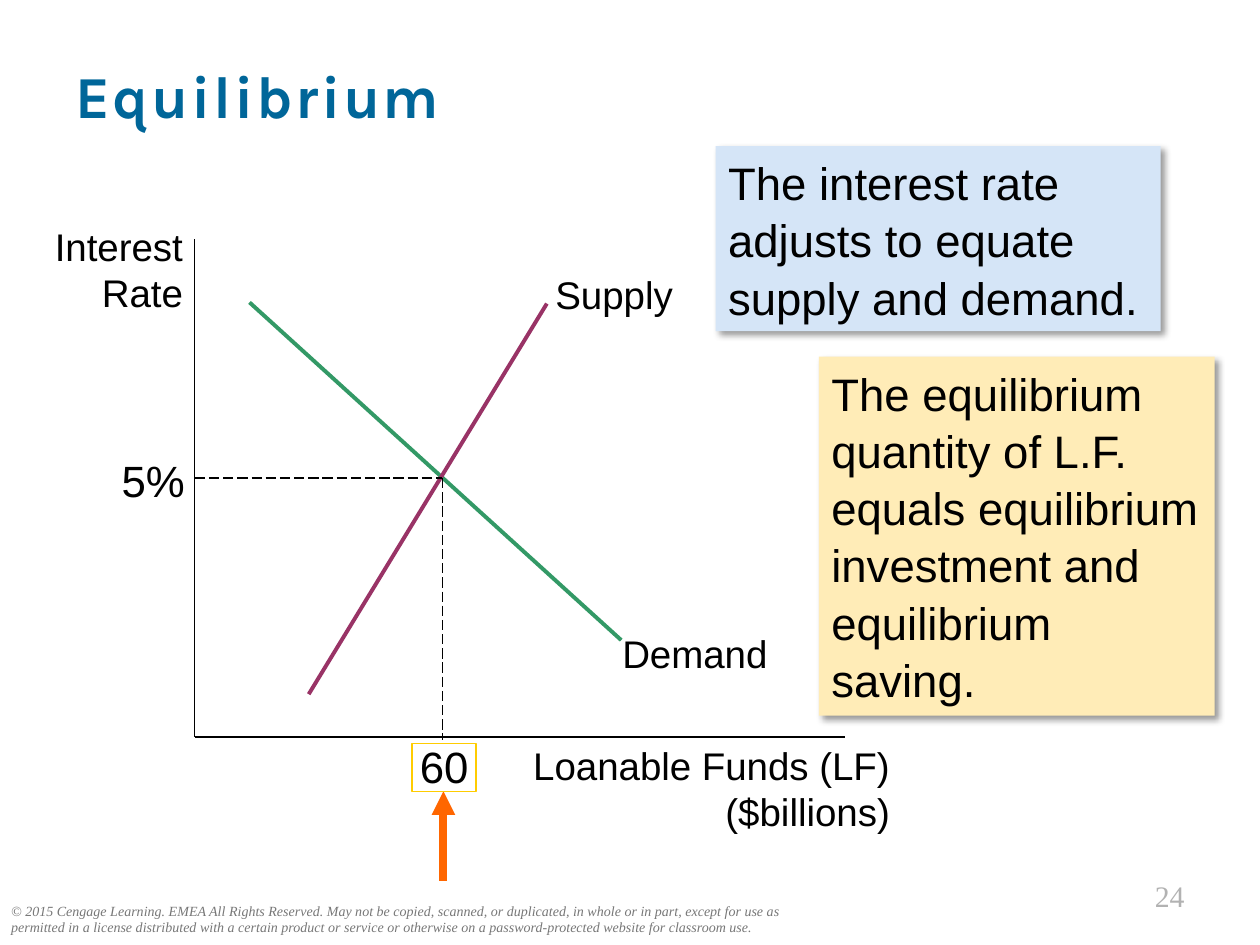
from lxml import etree
from pptx import Presentation
from pptx import util as u
from pptx.dml.color import RGBColor
from pptx.enum import dml, shapes, text
from pptx.oxml import parse_xml
from pptx.oxml.ns import nsdecls, qn

BLACK = "000000"
RIGHT, CENTER = text.PP_ALIGN.RIGHT, text.PP_ALIGN.CENTER

# Corner of the axes and the point where the curves cross
ORIGIN_X, ORIGIN_Y = 111.3, 421.2
BALANCE_X, BALANCE_Y = 252.7, 273.2


def color(value):
    return RGBColor.from_string(value)


def points(*values):
    return [u.Pt(value) for value in values]


def write(shape, words, size=22, font="Arial", fill=BLACK, bold=False, italic=False,
          align=text.PP_ALIGN.LEFT, anchor=text.MSO_ANCHOR.TOP, line_spacing=None,
          side_inset=7.2, tracking=None):
    """Put one formatted paragraph into a shape; tracking is in points."""
    frame = shape.text_frame
    frame.word_wrap = True
    frame.vertical_anchor = anchor
    frame.margin_left = frame.margin_right = u.Pt(side_inset)
    frame.margin_top = frame.margin_bottom = u.Pt(3.6)
    paragraph = frame.paragraphs[0]
    paragraph.text = words
    paragraph.alignment = align
    if line_spacing:
        paragraph.line_spacing = line_spacing
    for run in paragraph.runs:
        run.font.size = u.Pt(size)
        run.font.name = font
        run.font.bold = bold
        run.font.italic = italic
        run.font.color.rgb = color(fill)
        if tracking:
            run.font._element.set("spc", str(int(tracking * 100)))


def add_label(slide, words, left, top, width, height, **style):
    box = slide.shapes.add_textbox(*points(left, top, width, height))
    write(box, words, **style)


def add_line(slide, start, end, stroke=BLACK, width=0.75, dashed=False, arrow=False):
    line = slide.shapes.add_connector(
        shapes.MSO_CONNECTOR.STRAIGHT, *points(*start, *end))
    line.line.color.rgb = color(stroke)
    line.line.width = u.Pt(width)
    if dashed:
        line.line.dash_style = dml.MSO_LINE.LONG_DASH
    if arrow:
        etree.SubElement(line.line._get_or_add_ln(), qn("a:tailEnd"), type="triangle")
    etree.SubElement(line._element.spPr, qn("a:effectLst"))


def add_rectangle(slide, left, top, width, height):
    rectangle = slide.shapes.add_shape(
        shapes.MSO_SHAPE.RECTANGLE, *points(left, top, width, height))
    rectangle.shadow.inherit = False
    return rectangle


def add_note(slide, words, left, top, width, height, fill):
    """Add a filled text panel with a soft shadow to the lower right."""
    note = add_rectangle(slide, left, top, width, height)
    note.fill.solid()
    note.fill.fore_color.rgb = color(fill)
    note.line.fill.background()
    effects = note._element.spPr.find(qn("a:effectLst"))
    effects.append(parse_xml(
        f'<a:outerShdw {nsdecls("a")} blurRad="{u.Pt(4)}" dist="{u.Pt(3)}" '
        f'dir="2700000" algn="tl" rotWithShape="0"><a:srgbClr val="{BLACK}">'
        '<a:alpha val="40000"/></a:srgbClr></a:outerShdw>'))
    write(note, words, size=26, line_spacing=1.05)


def add_frame(slide, left, top, width, height, stroke):
    frame = add_rectangle(slide, left, top, width, height)
    frame.fill.background()
    frame.line.color.rgb = color(stroke)
    frame.line.width = u.Pt(0.75)


def add_footer(slide):
    add_label(slide, "© 2015 Cengage Learning. EMEA All Rights Reserved. May not be copied, "
              "scanned, or duplicated, in whole or in part, except for use as permitted in a "
              "license distributed with a certain product or service or otherwise on a "
              "password-protected website for classroom use.",
              -0.7, 512, 463, 26.6, size=8, font="Times New Roman", fill="777777", italic=True)
    add_label(slide, "24", 594, 498.2, 90, 27.4, size=17, font="Times New Roman",
              fill="B2B2B2", align=RIGHT)


def add_axes(slide):
    add_line(slide, (ORIGIN_X, 136.8), (ORIGIN_X, ORIGIN_Y))
    add_line(slide, (ORIGIN_X, ORIGIN_Y), (483, ORIGIN_Y))
    add_label(slide, "Interest\nRate", 2.9, 123.8, 108.7, 59.8, align=RIGHT)
    add_label(slide, "Loanable Funds (LF) ($billions)", 275.8, 420.5, 239.8, 59.8, align=RIGHT)


def add_equilibrium(slide):
    balance = (BALANCE_X, BALANCE_Y)
    value_style = dict(size=25, align=CENTER, side_inset=0)
    add_line(slide, (ORIGIN_X, BALANCE_Y), balance, dashed=True)
    add_label(slide, "5%", 63.4, 255.6, 48.2, 37.4, **value_style)
    add_line(slide, balance, (BALANCE_X, 422.6), dashed=True)
    add_label(slide, "60", 229.7, 419, 48.2, 37.4, **value_style)
    add_line(slide, (253.4, 503.3), (253.4, 452.2), "FF6600", 4.5, arrow=True)
    add_frame(slide, 235.4, 424.8, 36.7, 27.4, "FFCC00")


def main():
    presentation = Presentation()
    presentation.slide_width, presentation.slide_height = points(720, 540)
    slide = presentation.slides.add_slide(presentation.slide_layouts[6])

    add_footer(slide)
    add_label(slide, "Equilibrium", 36, 18, 648, 72, size=34, font="Karla", fill="006699",
              bold=True, anchor=text.MSO_ANCHOR.MIDDLE, tracking=1.5)
    add_axes(slide)
    add_line(slide, (142.6, 172.8), (355, 365.8), "339966", 2.25)
    add_label(slide, "Demand", 348.5, 356.4, 107.3, 33.8)
    add_note(slide, "The interest rate adjusts to equate supply and demand.",
             409, 83.5, 254.2, 105.8, "D5E5F7")
    add_line(slide, (176.4, 396.7), (312.5, 173.5), "993366", 2.25)
    add_label(slide, "Supply", 310.3, 151.2, 91.4, 33.8)
    add_note(slide, "The equilibrium quantity of L.F. equals equilibrium investment "
             "and equilibrium saving.", 468, 203.8, 226.1, 205.2, "FFECB7")
    add_equilibrium(slide)

    presentation.save("out.pptx")


if __name__ == "__main__":
    main()
